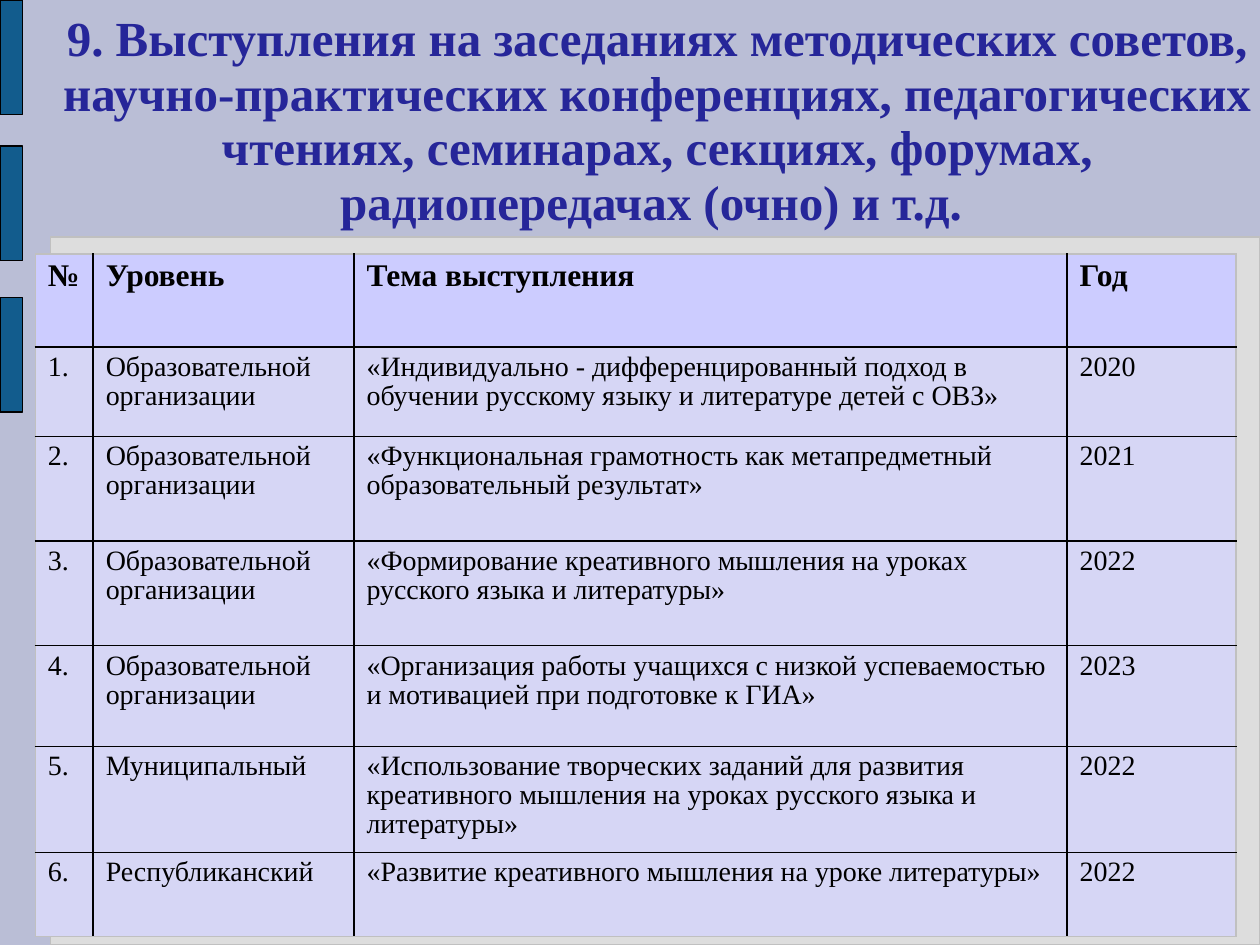
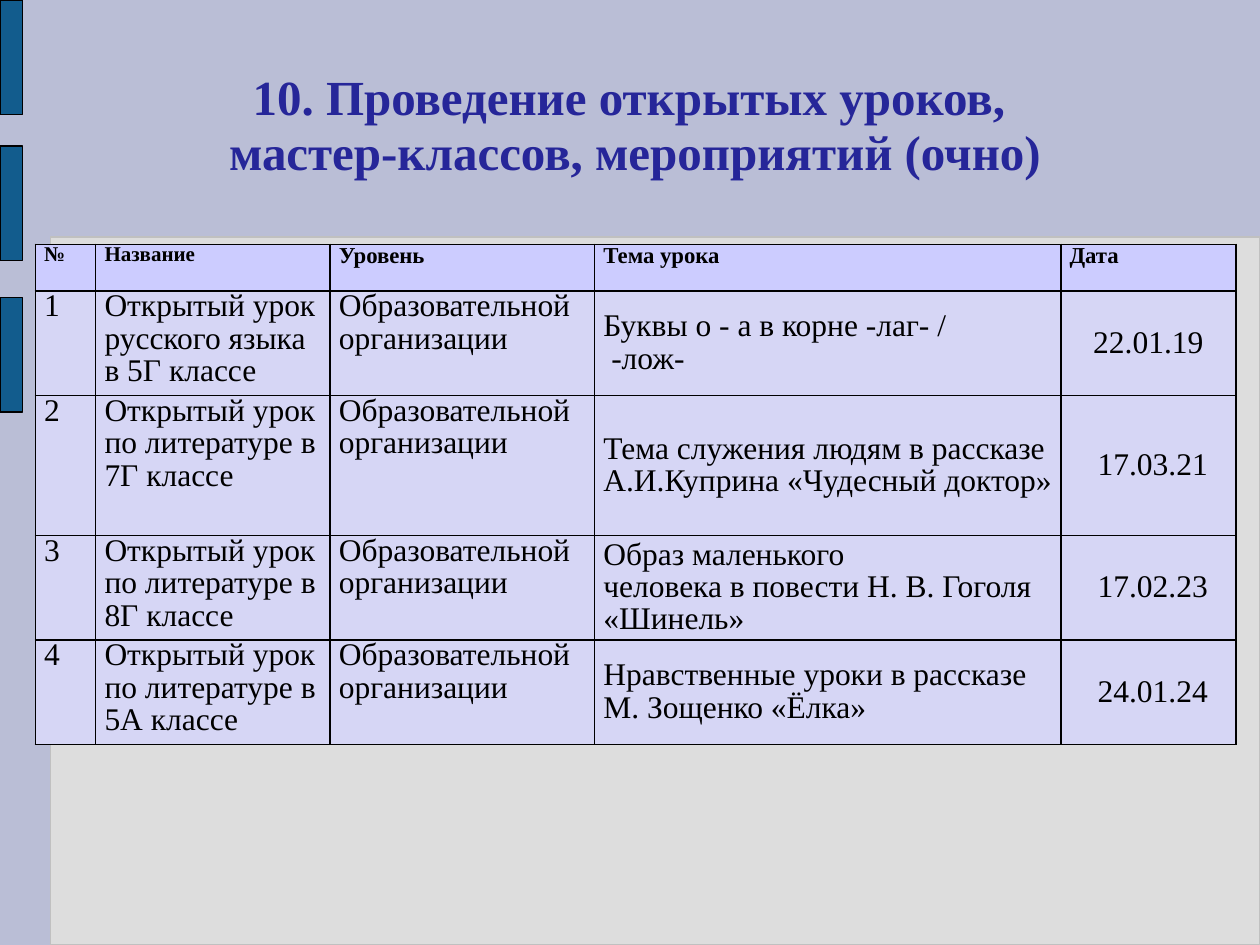
from lxml import etree
from pptx import Presentation
from pptx.dml.color import RGBColor
from pptx.enum.shapes import MSO_SHAPE
from pptx.enum.text import MSO_ANCHOR, MSO_AUTO_SIZE, PP_ALIGN
from pptx.oxml.ns import qn
from pptx.util import Inches, Pt

ROUNDED = MSO_SHAPE.ROUNDED_RECTANGLE
TOP, MIDDLE = MSO_ANCHOR.TOP, MSO_ANCHOR.MIDDLE
CENTER, LEFT = PP_ALIGN.CENTER, PP_ALIGN.LEFT
NO_AUTOFIT = MSO_AUTO_SIZE.NONE
TITLE_ONLY = 5

FONT = "Times New Roman"
LINE_SPACING = 0.93
COLUMNS, ROWS = 100, 75
COLORS = {
    "background": "BABED6", "panel": "DDDDDD", "panel_line": "C0C0C0",
    "tab": "125C8D", "black": "000000", "title": "262699",
    "header": "CCCCFF", "body": "D6D6F5",
}

SCHOOL = "Образовательной организации"
TALKS = [
    ["№", "Уровень", "Тема выступления", "Год"],
    ["1.", SCHOOL, "«Индивидуально - дифференцированный подход в обучении "
     "русскому языку и литературе детей с ОВЗ»", "2020"],
    ["2.", SCHOOL, "«Функциональная грамотность как метапредметный "
     "образовательный результат»", "2021"],
    ["3.", SCHOOL, "«Формирование креативного мышления на уроках "
     "русского языка и литературы»", "2022"],
    ["4.", SCHOOL, "«Организация работы учащихся с низкой успеваемостью "
     "и мотивацией при подготовке к ГИА»", "2023"],
    ["5.", "Муниципальный", "«Использование творческих заданий для развития "
     "креативного мышления на уроках русского языка и литературы»", "2022"],
    ["6.", "Республиканский",
     "«Развитие креативного мышления на уроке литературы»", "2022"],
]
LESSONS = [
    ["№", "Название", "Уровень", "Тема урока", "Дата"],
    ["1", "Открытый урок русского языка в 5Г классе", SCHOOL,
     "Буквы о - а в корне -лаг- /\n -лож-", "22.01.19"],
    ["2", "Открытый урок по литературе в 7Г классе", SCHOOL,
     "Тема служения людям в рассказе А.И.Куприна «Чудесный доктор»", "17.03.21"],
    ["3", "Открытый урок по литературе в 8Г классе", SCHOOL,
     "Образ маленького\nчеловека в повести Н. В. Гоголя «Шинель»", "17.02.23"],
    ["4", "Открытый урок по литературе в 5А классе", SCHOOL,
     "Нравственные уроки в рассказе М. Зощенко «Ёлка»", "24.01.24"],
]


def grid(count):
    return Inches(count / 10)


def rgb(name):
    return RGBColor.from_string(COLORS[name])


def format_text(frame, size, color, bold, align):
    for para in frame.paragraphs:
        para.alignment = align
        para.line_spacing = LINE_SPACING
        for span in para.runs:
            font = span.font
            font.name, font.size, font.bold = FONT, Pt(size), bold
            font.color.rgb = rgb(color)


def add_master_block(page, master, box, fill, line):
    block = page.shapes.add_shape(ROUNDED, *map(grid, box))
    block.adjustments[0] = 0
    block.shadow.inherit = False
    block.fill.solid()
    block.fill.fore_color.rgb = rgb(fill)
    block.line.color.rgb = rgb(line)
    block.line.width = Pt(0.75)
    master.shapes._spTree.append(block._element)


def decorate_master(page, master):
    master.background.fill.solid()
    master.background.fill.fore_color.rgb = rgb("background")
    for holder in list(master.placeholders):
        if holder.placeholder_format.type is not None:
            holder.left, holder.width = grid(4), grid(COLUMNS - 4)
    panel_top = 18.8
    add_master_block(page, master, (4, panel_top, COLUMNS - 4, ROWS - panel_top),
                     "panel", "panel_line")
    for top in (0, 11.6, 23.6):
        add_master_block(page, master, (0, top, 1.8, 9.1), "tab", "black")


def place_title(page, box, text):
    title = page.shapes.title
    title.left, title.top, title.width, title.height = map(grid, box)
    frame = title.text_frame
    frame.text = text
    frame.word_wrap = True
    frame.auto_size = NO_AUTOFIT
    frame.vertical_anchor = MIDDLE
    frame.margin_left = frame.margin_right = 0
    frame.margin_top = frame.margin_bottom = 0
    format_text(frame, 28, "title", True, CENTER)


def draw_borders(cell, sides):
    properties = cell._tc.get_or_add_tcPr()
    for index, (side, color) in enumerate(sides.items()):
        line = etree.Element(qn("a:ln" + side), w=str(Pt(1)))
        fill = etree.SubElement(line, qn("a:solidFill"))
        etree.SubElement(fill, qn("a:srgbClr"), val=COLORS[color])
        properties.insert(index, line)


def place_table(page, box, records, widths, heights, header_sizes, body_size,
                margins, edge, middle_from, center_from):
    left, top, width, height = map(grid, box)
    row_count, column_count = len(records), len(widths)
    table = page.shapes.add_table(
        row_count, column_count, left, top, width, height).table
    for column, share in zip(table.columns, widths):
        column.width = int(width * share / sum(widths))
    for row, share in zip(table.rows, heights):
        row.height = int(height * share / sum(heights))
    for r, record in enumerate(records):
        for c, text in enumerate(record):
            cell = table.cell(r, c)
            header = r == 0
            cell.text_frame.text = text
            cell.margin_left = cell.margin_right = grid(margins[0])
            cell.margin_top = cell.margin_bottom = grid(margins[1])
            cell.vertical_anchor = MIDDLE if not header and c >= middle_from else TOP
            cell.fill.solid()
            cell.fill.fore_color.rgb = rgb("header" if header else "body")
            centered = not header and c >= center_from
            format_text(cell.text_frame, header_sizes[c] if header else body_size,
                        "black", header, CENTER if centered else LEFT)
            if centered and r > 1:
                indent = cell.text_frame.paragraphs[0]._p.get_or_add_pPr()
                indent.set("marL", str(grid(0.7)))
            draw_borders(cell, {
                "L": edge if c == 0 else "black",
                "R": edge if c == column_count - 1 else "black",
                "T": edge if header else "black",
                "B": edge if r == row_count - 1 else "black",
            })


def build_talks(page):
    place_title(page, (4.3, 0, 95.7, 19.4),
                "9. Выступления на заседаниях методических советов, "
                "научно-практических конференциях, педагогических чтениях, "
                "семинарах, секциях, форумах, радиопередачах (очно) и т.д. ")
    place_table(page, (2.8, 20.15, 95.3, 54.2), TALKS,
                widths=(4.6, 20.7, 56.6, 13.4),
                heights=(7.4, 7.1, 8.3, 8.3, 8, 8.4, 6.7),
                header_sizes=[18] * 4, body_size=16, margins=(1, 0.5),
                edge="panel_line", middle_from=4, center_from=4)


def build_lessons(page):
    place_title(page, (7.3, 1.5, 85.2, 17.1),
                "10. Проведение открытых уроков,\v мастер-классов, мероприятий (очно)")
    place_table(page, (2.8, 19.4, 95.3, 39.7), LESSONS,
                widths=(4.8, 18.6, 21, 37, 13.9),
                heights=(3.7, 8.3, 11.1, 8.3, 8.3),
                header_sizes=[12, 12, 13, 13, 13], body_size=18, margins=(0.7, 0),
                edge="black", middle_from=3, center_from=4)


def main():
    deck = Presentation()
    deck.slide_width, deck.slide_height = grid(COLUMNS), grid(ROWS)
    layout = deck.slide_layouts[TITLE_ONLY]
    for number, build in enumerate((build_talks, build_lessons)):
        page = deck.slides.add_slide(layout)
        if number == 0:
            decorate_master(page, deck.slide_master)
        build(page)
    deck.save("out.pptx")


if __name__ == "__main__":
    main()
